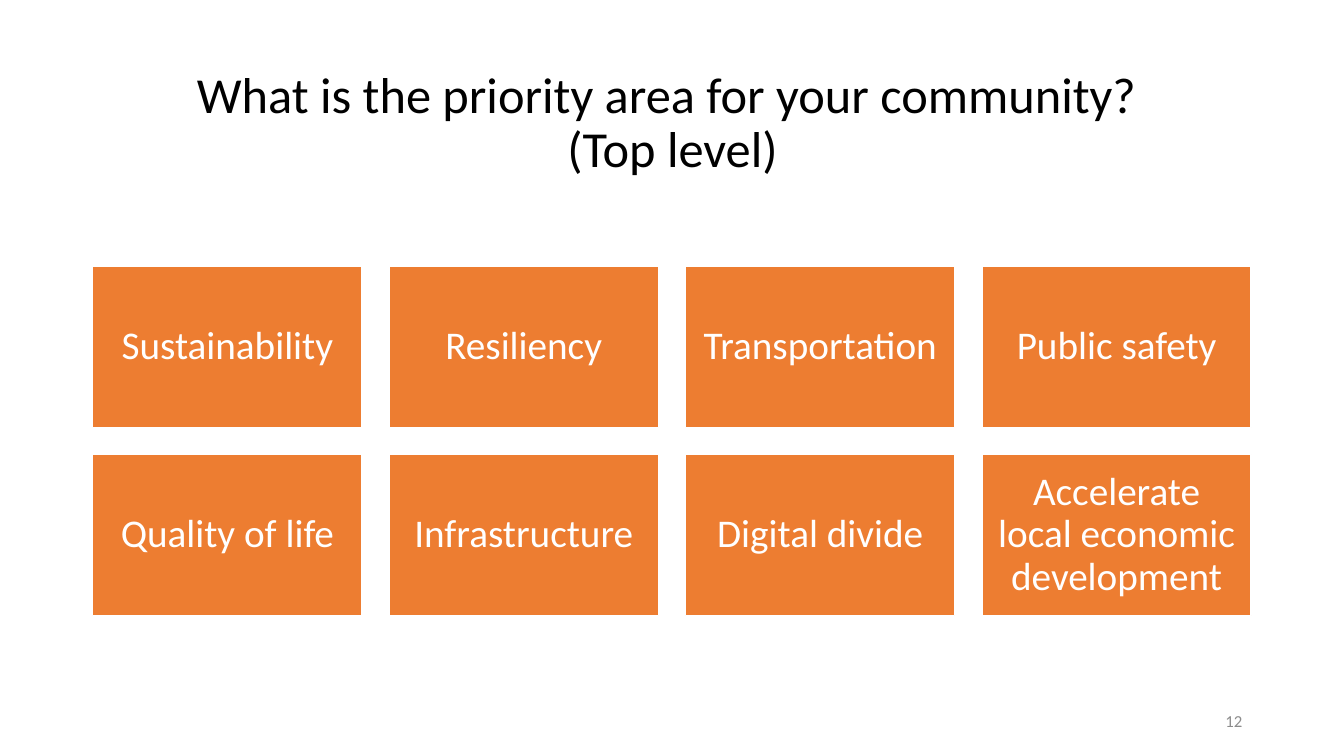
from pptx import Presentation
from pptx.dml.color import RGBColor
from pptx.enum import shapes, text
from pptx.util import Inches, Pt

WHITE = RGBColor(0xFF, 0xFF, 0xFF)
BLACK = RGBColor(0, 0, 0)
ORANGE = RGBColor(0xED, 0x7D, 0x31)
GREY = RGBColor(0x8C, 0x8C, 0x8C)
FONT = "Calibri"

PRIORITIES = [
    ["Sustainability", "Resiliency", "Transportation", "Public safety"],
    ["Quality of life", "Infrastructure", "Digital divide",
     "Accelerate local economic development"],
]


def write(shape, content, size, color, alignment, line_spacing=1.0):
    frame = shape.text_frame
    frame.text = content
    frame.word_wrap = True
    frame.auto_size = text.MSO_AUTO_SIZE.NONE
    frame.vertical_anchor = text.MSO_ANCHOR.MIDDLE
    paragraph = frame.paragraphs[0]
    paragraph.alignment = alignment
    paragraph.line_spacing = line_spacing
    for run in paragraph.runs:
        run.font.name = FONT
        run.font.size = Pt(size)
        run.font.color.rgb = color


def add_title(slide, left, top, width, height):
    title = slide.shapes.title
    title.left, title.top = Inches(left), Inches(top)
    title.width, title.height = Inches(width), Inches(height)
    write(title, "What is the priority area for your community? \v(Top level)",
          36, BLACK, text.PP_ALIGN.CENTER, 0.9)


def add_priority_grid(slide, left, top, width, height, gap=0.27):
    """Fill the given box with equal tiles, one for each priority."""
    row_count, column_count = len(PRIORITIES), len(PRIORITIES[0])
    tile_width = (width - gap * (column_count - 1)) / column_count
    tile_height = (height - gap * (row_count - 1)) / row_count
    for row, names in enumerate(PRIORITIES):
        for column, name in enumerate(names):
            tile = slide.shapes.add_shape(
                shapes.MSO_SHAPE.RECTANGLE,
                Inches(left + column * (tile_width + gap)),
                Inches(top + row * (tile_height + gap)),
                Inches(tile_width), Inches(tile_height))
            tile.shadow.inherit = False
            tile.fill.solid()
            tile.fill.fore_color.rgb = ORANGE
            tile.line.color.rgb = WHITE
            tile.line.width = Pt(1)
            frame = tile.text_frame
            frame.margin_left = frame.margin_right = Inches(0.12)
            frame.margin_top = frame.margin_bottom = Inches(0.12)
            write(tile, name, 28, WHITE, text.PP_ALIGN.CENTER, 0.9)


def add_page_number(slide, left, top, width, height):
    box = slide.shapes.add_textbox(
        Inches(left), Inches(top), Inches(width), Inches(height))
    write(box, "12", 12, GREY, text.PP_ALIGN.RIGHT)
    box.text_frame.paragraphs[0].space_after = Pt(6)


def main():
    presentation = Presentation()
    presentation.slide_width = Inches(13.33)
    presentation.slide_height = Inches(7.5)
    slide = presentation.slides.add_slide(presentation.slide_layouts[5])
    add_title(slide, 0.92, 0.61, 11.5, 1.24)
    add_page_number(slide, 9.42, 6.95, 3, 0.4)
    add_priority_grid(slide, 0.92, 2.64, 11.49, 3.47)
    presentation.save("out.pptx")


if __name__ == "__main__":
    main()
